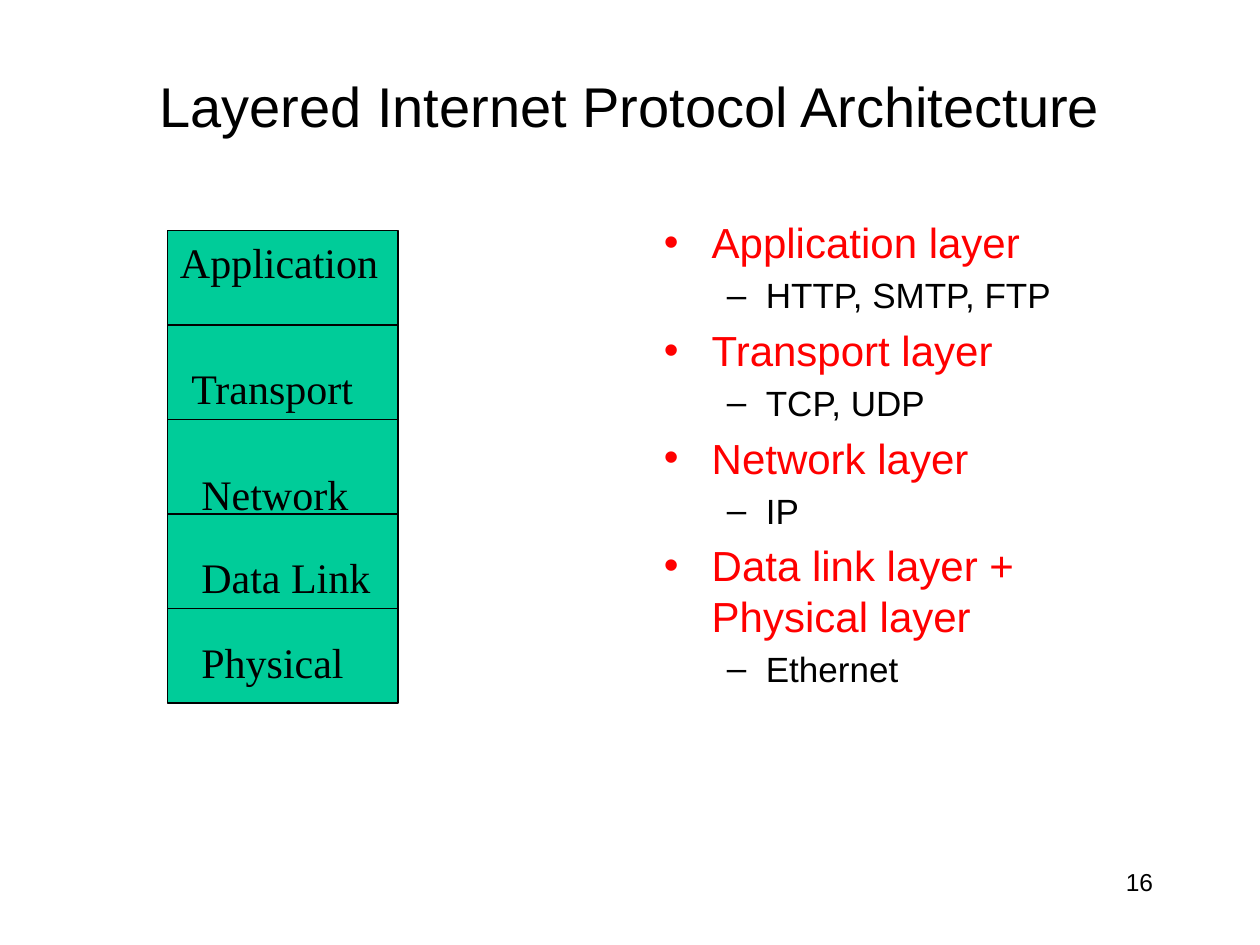
from lxml.etree import SubElement
from pptx import Presentation
from pptx.dml.color import RGBColor
from pptx.enum.shapes import MSO_CONNECTOR as Connector, MSO_SHAPE as Shape
from pptx.enum.text import MSO_ANCHOR as Anchor, PP_ALIGN as Align
from pptx.oxml.ns import qn
from pptx.util import Inches, Pt

BLACK = RGBColor(0, 0, 0)
RED = RGBColor(0xFF, 0, 0)
GREEN = RGBColor(0, 0xCC, 0x99)
SANS, SERIF = "Arial", "Times New Roman"

TITLE = "Layered Internet Protocol Architecture"
PAGE_NUMBER = "16"
STACK_TOP_LABEL = "Application"
# Text, left, top, width
STACK_LABELS = [
    ("Transport", 1.42, 2.83, 1.5),
    ("Network", 1.5, 3.67, 1.38),
    ("Data Link", 1.5, 4.33, 1.56),
    ("Physical", 1.5, 5, 1.34),
]
PROTOCOLS = [
    ("Application layer", "HTTP, SMTP, FTP"),
    ("Transport layer", "TCP, UDP"),
    ("Network layer", "IP"),
    ("Data link layer + Physical layer", "Ethernet"),
]
STACK_LEFT, STACK_TOP, STACK_WIDTH, LAYER_HEIGHT = 1.33, 1.83, 1.83, 0.75
LAYER_COUNT = len(STACK_LABELS) + 1


def write(paragraph, text, size=24, font=SERIF, color=BLACK, align=Align.LEFT):
    paragraph.alignment = align
    run = paragraph.add_run()
    run.text = text
    run.font.name = font
    run.font.size = Pt(size)
    run.font.color.rgb = color


def add_text(slide, text, left, top, width, height, wrap=True,
             anchor=Anchor.TOP, **style):
    box = slide.shapes.add_textbox(
        Inches(left), Inches(top), Inches(width), Inches(height))
    frame = box.text_frame
    frame.word_wrap = wrap
    frame.vertical_anchor = anchor
    if text:
        write(frame.paragraphs[0], text, **style)
    return frame


def set_bullet(paragraph, character, margin, hanging):
    properties = paragraph._p.get_or_add_pPr()
    properties.set("marL", str(Inches(margin)))
    properties.set("indent", str(-Inches(hanging)))
    spacing = SubElement(properties, qn("a:spcBef"))
    SubElement(spacing, qn("a:spcPct")).set("val", "20000")
    SubElement(properties, qn("a:buFont")).set("typeface", SANS)
    SubElement(properties, qn("a:buChar")).set("char", character)


presentation = Presentation()
presentation.slide_width = Inches(10)
presentation.slide_height = Inches(7.5)
slide = presentation.slides.add_slide(presentation.slide_layouts[6])

# Layer stack
stack = slide.shapes.add_shape(
    Shape.RECTANGLE, Inches(STACK_LEFT), Inches(STACK_TOP),
    Inches(STACK_WIDTH), Inches(LAYER_HEIGHT * LAYER_COUNT))
stack.shadow.inherit = False
stack.fill.solid()
stack.fill.fore_color.rgb = GREEN
stack.line.color.rgb = BLACK
stack.line.width = Pt(0.75)
stack.text_frame.word_wrap = False
stack.text_frame.vertical_anchor = Anchor.TOP
write(stack.text_frame.paragraphs[0], STACK_TOP_LABEL)

# Title
add_text(slide, TITLE, 0.75, 0.42, 8.5, 0.83, anchor=Anchor.MIDDLE,
         size=32, font=SANS, align=Align.CENTER)

# Protocols by layer
frame = add_text(slide, "", 5.17, 1.67, 3.92, 4.83)
paragraph = frame.paragraphs[0]
for index, (layer, examples) in enumerate(PROTOCOLS):
    if index:
        paragraph = frame.add_paragraph()
    write(paragraph, layer, font=SANS, color=RED)
    set_bullet(paragraph, "•", 0.38, 0.38)
    paragraph = frame.add_paragraph()
    paragraph.level = 1
    write(paragraph, examples, size=20, font=SANS)
    set_bullet(paragraph, "–", 0.81, 0.31)

# Page number
add_text(slide, PAGE_NUMBER, 7.17, 6.83, 2.08, 0.5,
         size=14, font=SANS, align=Align.RIGHT)

# Dividers between layers
for row in range(1, LAYER_COUNT):
    y = Inches(STACK_TOP + row * LAYER_HEIGHT)
    divider = slide.shapes.add_connector(
        Connector.STRAIGHT, Inches(STACK_LEFT), y,
        Inches(STACK_LEFT + STACK_WIDTH), y)
    divider.line.color.rgb = BLACK
    divider.line.width = Pt(0.75)
    SubElement(divider._element.spPr, qn("a:effectLst"))

# Labels of the lower layers
for label, left, top, width in STACK_LABELS:
    add_text(slide, label, left, top, width, 0.51, wrap=False)

presentation.save("out.pptx")
